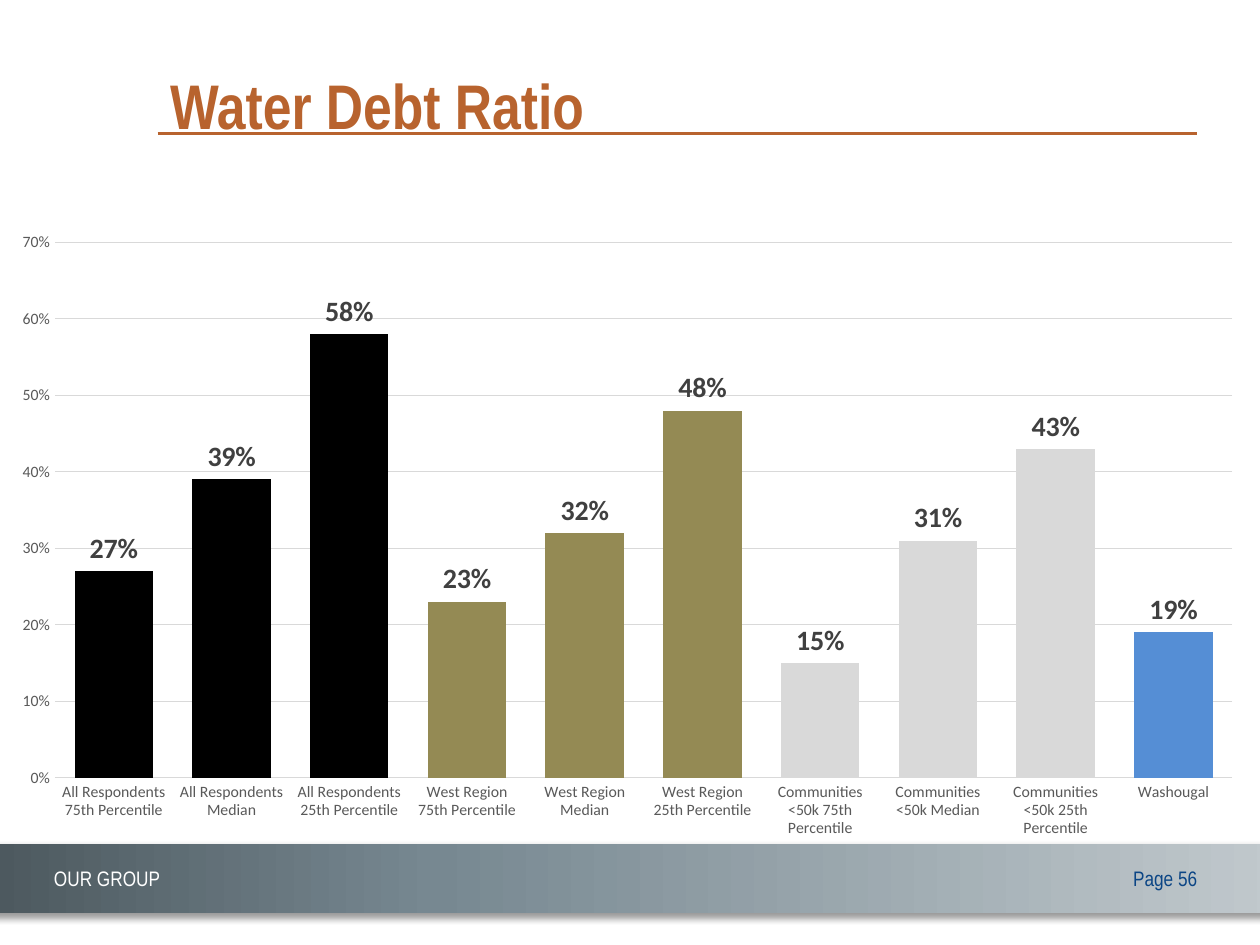
from copy import deepcopy

from lxml import etree
from pptx import Presentation
from pptx.chart.data import CategoryChartData
from pptx.dml.color import RGBColor
from pptx.enum.chart import XL_CHART_TYPE, XL_LABEL_POSITION, XL_TICK_MARK
from pptx.enum.shapes import MSO_CONNECTOR, MSO_SHAPE
from pptx.enum.text import MSO_ANCHOR, MSO_AUTO_SIZE, PP_ALIGN
from pptx.oxml import parse_xml
from pptx.oxml.ns import nsdecls, qn
from pptx.util import Inches, Pt

COLUMN = XL_CHART_TYPE.COLUMN_CLUSTERED
OUTSIDE_END = XL_LABEL_POSITION.OUTSIDE_END
NO_TICK = XL_TICK_MARK.NONE
STRAIGHT = MSO_CONNECTOR.STRAIGHT
RECT = MSO_SHAPE.RECTANGLE
MIDDLE = MSO_ANCHOR.MIDDLE
NO_FIT = MSO_AUTO_SIZE.NONE
LEFT, RIGHT = PP_ALIGN.LEFT, PP_ALIGN.RIGHT

RUST, BLUE, GRID = "B8632E", "0B4585", "D9D9D9"
SHADOW = (
    f'<a:effectLst {nsdecls("a")}>'
    '<a:outerShdw blurRad="50800" dist="38100" dir="2700000" algn="tl" rotWithShape="0">'
    '<a:srgbClr val="000000"><a:alpha val="40000"/></a:srgbClr>'
    "</a:outerShdw></a:effectLst>"
)


def rgb(value):
    return RGBColor.from_string(value)


def style_font(font, size, color, name="Calibri", bold=False):
    font.size = Pt(size)
    font.color.rgb = rgb(color)
    font.name = name
    font.bold = bold


def write(tf, text, align=LEFT, **style):
    p = tf.paragraphs[0]
    p.alignment = align
    r = p.add_run()
    r.text = text
    style_font(r.font, **style)


class Deck:
    head_font = "Arial Narrow"

    def __init__(self, prs):
        self.s = prs.slides.add_slide(prs.slide_layouts[5])

    def title(self, text, x, y, w, h):
        sp = self.s.shapes.title
        sp.left, sp.top, sp.width, sp.height = map(Inches, (x, y, w, h))
        tf = sp.text_frame
        tf.auto_size = NO_FIT
        tf.vertical_anchor = MIDDLE
        write(tf, text, size=36, color=RUST, name=self.head_font, bold=True)

    def text(self, text, x, y, w, h, color, align=LEFT):
        sp = self.s.shapes.add_textbox(*map(Inches, (x, y, w, h)))
        tf = sp.text_frame
        tf.word_wrap = True
        write(tf, text, align, size=12, color=color, name=self.head_font)

    def line(self, x1, y1, x2, y2, color, width):
        sp = self.s.shapes.add_connector(STRAIGHT, *map(Inches, (x1, y1, x2, y2)))
        sp.line.color.rgb = rgb(color)
        sp.line.width = Pt(width)
        etree.SubElement(sp._element.spPr, qn("a:effectLst"))

    def band(self, x, y, w, h, stops):
        sp = self.s.shapes.add_shape(RECT, *map(Inches, (x, y, w, h)))
        sp.line.fill.background()
        sp.fill.gradient()
        sp.fill.gradient_angle = 0
        gs_list = sp._element.spPr.find(qn("a:gradFill")).find(qn("a:gsLst"))
        gs_list.append(deepcopy(gs_list[-1]))
        for stop, (position, color) in zip(sp.fill.gradient_stops, stops):
            stop.position = position
            stop.color.rgb = rgb(color)
        sp._element.spPr.append(parse_xml(SHADOW))

    def column_chart(self, x, y, w, h, groups):
        data = CategoryChartData(number_format="0%")
        data.categories = [name for _, bars in groups for name, _ in bars]
        data.add_series("Series 1", [value for _, bars in groups for _, value in bars])
        frame = self.s.shapes.add_chart(COLUMN, *map(Inches, (x, y, w, h)), data)
        chart = frame.chart
        chart.has_legend = False
        chart.has_title = False
        style_font(chart.font, 10, "000000")
        self.axes(chart)

        plot = chart.plots[0]
        plot.gap_width = 50
        plot.overlap = -27
        plot.vary_by_categories = False
        series = plot.series[0]
        series.invert_if_negative = False
        series.format.fill.solid()
        series.format.fill.fore_color.rgb = rgb(groups[0][0])
        colors = [color for color, bars in groups for _ in bars]
        for i, color in enumerate(colors):
            if color != groups[0][0]:
                fill = series.points[i].format.fill
                fill.solid()
                fill.fore_color.rgb = rgb(color)

        labels = series.data_labels
        labels.show_value = True
        labels.position = OUTSIDE_END
        labels.number_format = "0%"
        labels.number_format_is_linked = False
        style_font(labels.font, 16, "404040", bold=True)

    def axes(self, chart):
        cat, val = chart.category_axis, chart.value_axis
        for axis in (cat, val):
            axis.major_tick_mark = axis.minor_tick_mark = NO_TICK
            style_font(axis.tick_labels.font, 9, "595959")
        val.minimum_scale, val.maximum_scale, val.major_unit = 0, 0.7, 0.1
        val.tick_labels.number_format = "0%"
        val.tick_labels.number_format_is_linked = False
        val.format.line.fill.background()
        for line in (cat.format.line, val.major_gridlines.format.line):
            line.color.rgb = rgb(GRID)
            line.width = Pt(0.75)


def main():
    prs = Presentation()
    prs.slide_width, prs.slide_height = Inches(10), Inches(7.5)
    deck = Deck(prs)

    deck.band(-0.17, 6.7, 10.33, 0.55, [(0, "4B575D"), (0.35, "778891"), (1, "C1C9CD")])
    deck.text("Page 56", 8.79, 6.82, 0.81, 0.3, BLUE, RIGHT)
    deck.line(1.25, 1.06, 9.5, 1.06, RUST, 1.5)
    deck.text("OUR GROUP", 0.33, 6.82, 1.42, 0.3, "FFFFFF")
    deck.title("Water Debt Ratio", 1.25, 0.33, 8.25, 1)

    ranks = ("75th Percentile", "Median", "25th Percentile")
    benchmarks = [
        ("All Respondents", "000000", (0.27, 0.39, 0.58)),
        ("West Region", "948A54", (0.23, 0.32, 0.48)),
        ("Communities <50k", "D9D9D9", (0.15, 0.31, 0.43)),
    ]
    groups = [
        (color, [(f"{name} {rank}", value) for rank, value in zip(ranks, values)])
        for name, color, values in benchmarks
    ]
    groups.append(("558ED5", [("Washougal", 0.19)]))
    deck.column_chart(-0.02, 1.75, 10, 5, groups)

    prs.save("out.pptx")


if __name__ == "__main__":
    main()
